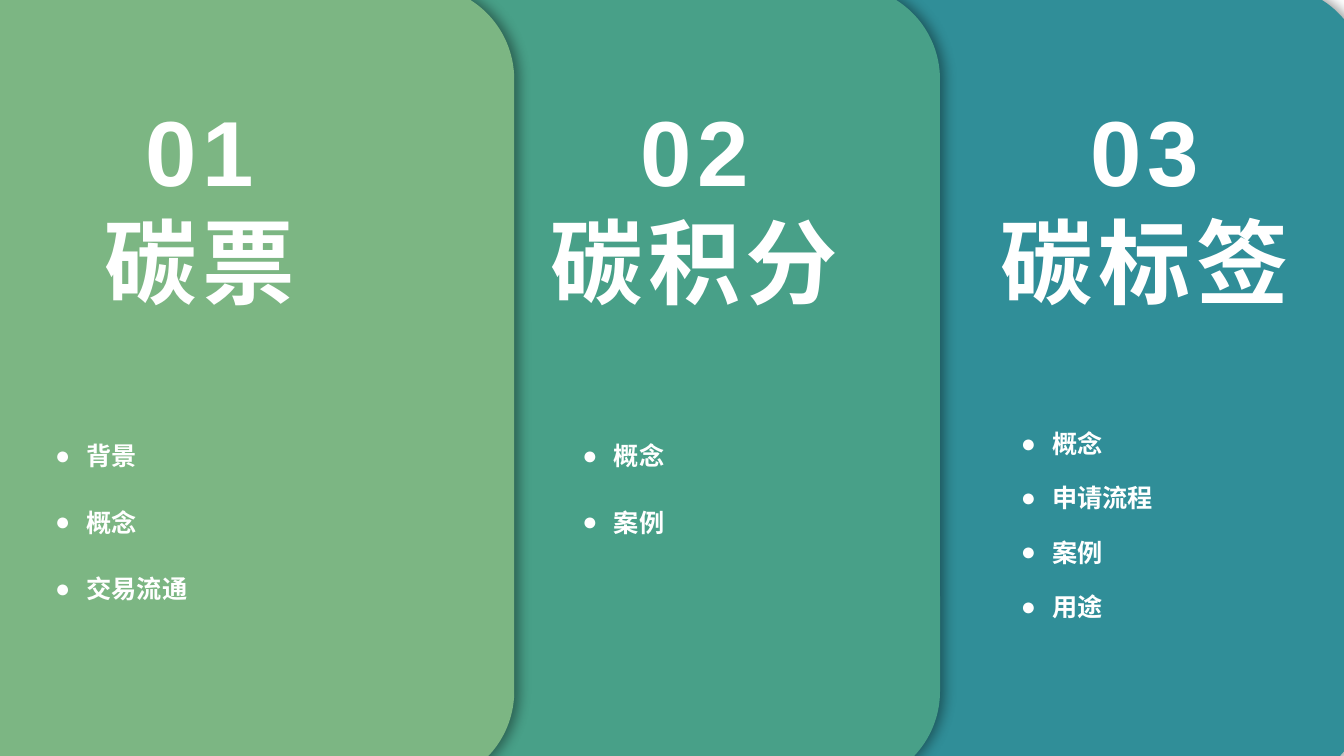
from lxml import etree
from pptx import Presentation
from pptx import util as u
from pptx.dml.color import RGBColor
from pptx.enum import shapes, text
from pptx.oxml import ns

COLORS = {"green": "7CB683", "teal": "48A088", "blue": "308E98",
          "white": "FFFFFF", "shadow": "000000"}

# Title and list boxes: left, width, height in cm
SECTIONS = [
    {"number": "01", "title": "碳票", "fill": "green",
     "title_box": (1.14, 7.8, 5.89), "list_box": (1.14, 11.28, 5.33),
     "items": ["背景", "概念", "交易流通"], "font": "Calibri", "spacing": 2.2},
    {"number": "02", "title": "碳积分", "fill": "teal",
     "title_box": (13.08, 8.84, 5.89), "list_box": (14.43, 8.15, 3.63),
     "items": ["概念", "案例"], "font": "Arial", "spacing": 2.2},
    {"number": "03", "title": "碳标签", "fill": "blue",
     "title_box": (24.31, 9.09, 5.89), "list_box": (25.48, 8.41, 5.79),
     "items": ["概念", "申请流程", "案例", "用途"], "font": "Arial", "spacing": 1.8},
]
CARD_LEFT, CARD_TOP, CARD_STEP = -1.19, -0.36, 10.73
CARD_WIDTH, CARD_HEIGHT = 14.15, 20.14
TITLE_TOP, LIST_TOP, INDENT = 2.24, 10.06, 0.79


def color(name):
    return RGBColor.from_string(COLORS[name])


def child(parent, tag, **attrs):
    return etree.SubElement(parent, ns.qn(tag), {k: str(v) for k, v in attrs.items()})


def add_card(slide, index, fill):
    sp = slide.shapes.add_shape(
        shapes.MSO_SHAPE.ROUNDED_RECTANGLE, u.Cm(CARD_LEFT + index * CARD_STEP),
        u.Cm(CARD_TOP), u.Cm(CARD_WIDTH), u.Cm(CARD_HEIGHT))
    sp.fill.solid()
    sp.fill.fore_color.rgb = color(fill)
    sp.line.fill.background()
    sp.shadow.inherit = False
    effects = sp._element.spPr.find(ns.qn("a:effectLst"))
    shadow = child(effects, "a:outerShdw", blurRad=u.Pt(9), dist=u.Pt(3), dir=0,
                   algn="l", rotWithShape=0)
    tint = child(shadow, "a:srgbClr", val=COLORS["shadow"])
    child(tint, "a:alpha", val=40000)


def add_text(slide, box, top, lines, size, font, spacing=None):
    left, width, height = box
    sp = slide.shapes.add_textbox(u.Cm(left), u.Cm(top), u.Cm(width), u.Cm(height))
    tf = sp.text_frame
    tf.word_wrap = True
    tf.auto_size = text.MSO_AUTO_SIZE.SHAPE_TO_FIT_TEXT
    tf.text = "\n".join(lines)
    for p in tf.paragraphs:
        if spacing:
            p.line_spacing = spacing
            pPr = p._p.get_or_add_pPr()
            pPr.set("marL", str(u.Cm(INDENT)))
            pPr.set("indent", str(-u.Cm(INDENT)))
            child(pPr, "a:buFont", typeface="Arial")
            child(pPr, "a:buChar", char="●")
        else:
            p.alignment = text.PP_ALIGN.CENTER
            for r in p.runs:
                r._r.get_or_add_rPr().set("spc", "400")
        p.font.size = u.Pt(size)
        p.font.name = font
        p.font.bold = True
        p.font.color.rgb = color("white")


def main():
    """Build the three-section overview of carbon tickets, points and labels."""
    prs = Presentation()
    prs.slide_width, prs.slide_height = u.Cm(33.87), u.Cm(19.05)
    slide = prs.slides.add_slide(prs.slide_layouts[6])
    for index, section in reversed(list(enumerate(SECTIONS))):
        add_card(slide, index, section["fill"])
    for section in SECTIONS:
        add_text(slide, section["title_box"], TITLE_TOP,
                 [section["number"], section["title"]], 66, "Arial")
        add_text(slide, section["list_box"], LIST_TOP, section["items"], 18,
                 section["font"], section["spacing"])
    prs.save("out.pptx")


if __name__ == "__main__":
    main()
